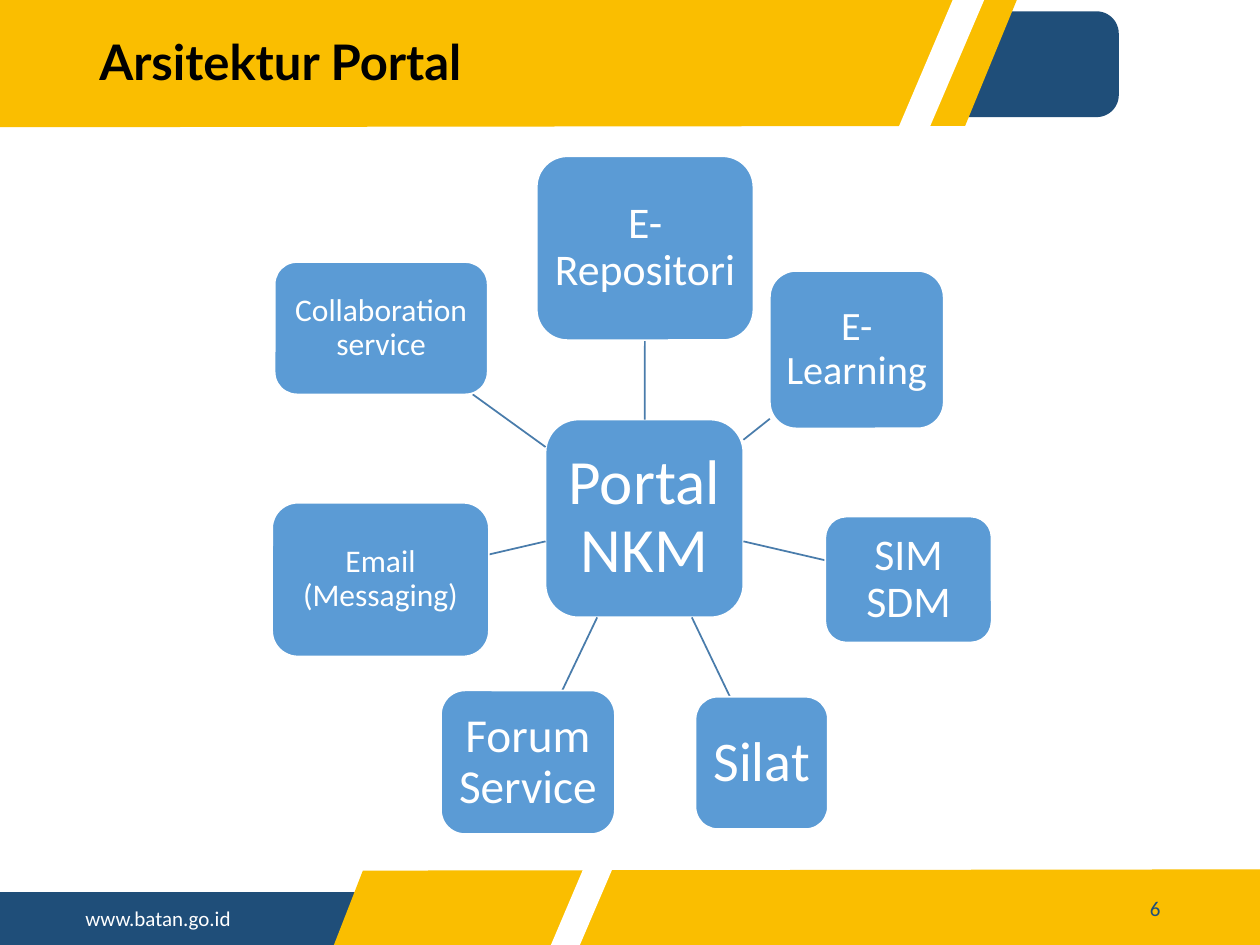
from dataclasses import dataclass

from lxml import etree
from pptx import Presentation
from pptx import util as u
from pptx.dml.color import RGBColor
from pptx.enum import shapes, text
from pptx.oxml import ns

NAVY = RGBColor(0x1F, 0x4E, 0x79)
GOLD = RGBColor(0xFA, 0xBE, 0x00)
BLUE = RGBColor(0x5B, 0x9B, 0xD5)
SPOKE = RGBColor(0x49, 0x7C, 0xAB)
WHITE = RGBColor(0xFF, 0xFF, 0xFF)
BLACK = RGBColor(0x00, 0x00, 0x00)


@dataclass(frozen=True)
class Box:
    left: float
    top: float
    width: float
    height: float

    @property
    def center(self) -> tuple[float, float]:
        return self.left + self.width / 2, self.top + self.height / 2

    def inches(self) -> list[u.Length]:
        return [u.Inches(v) for v in (self.left, self.top, self.width, self.height)]

    def edge_toward(self, target: tuple[float, float]) -> tuple[float, float]:
        x, y = self.center
        dx, dy = target[0] - x, target[1] - y
        reach = 1 / max(abs(dx) / (self.width / 2), abs(dy) / (self.height / 2))
        return x + dx * reach, y + dy * reach


@dataclass(frozen=True)
class Node:
    label: str
    box: Box
    size: int


HUB = Node("Portal NKM", Box(4.33, 3.33, 1.57, 1.57), 36)
SERVICES = [
    Node("E-Repositori", Box(4.26, 1.24, 1.72, 1.46), 25),
    Node("E-Learning", Box(6.11, 2.15, 1.38, 1.25), 23),
    Node("SIM SDM", Box(6.55, 4.1, 1.32, 1), 25),
    Node("Silat", Box(5.52, 5.53, 1.05, 1.05), 32),
    Node("Forum Service", Box(3.5, 5.48, 1.38, 1.14), 27),
    Node("Email (Messaging)", Box(2.16, 3.99, 1.72, 1.22), 18),
    Node("Collaboration service", Box(2.18, 2.08, 1.69, 1.05), 18),
]


def paint(shape, fill: RGBColor) -> None:
    shape.shadow.inherit = False
    shape.fill.solid()
    shape.fill.fore_color.rgb = fill
    shape.line.fill.background()


def add_block(slide, kind, box: Box, fill: RGBColor):
    block = slide.shapes.add_shape(kind, *box.inches())
    paint(block, fill)
    return block


def add_band(slide, corners: list[tuple[float, float]], fill: RGBColor) -> None:
    points = [(u.Inches(x), u.Inches(y)) for x, y in corners]
    builder = slide.shapes.build_freeform(*points[0])
    builder.add_line_segments(points[1:], close=True)
    paint(builder.convert_to_shape(), fill)


def write(frame, words: str, size: int, color: RGBColor, font="Calibri",
          bold=False, align=text.PP_ALIGN.LEFT, spacing=1.0,
          anchor=text.MSO_ANCHOR.MIDDLE) -> None:
    frame.word_wrap = True
    frame.vertical_anchor = anchor
    paragraph = frame.paragraphs[0]
    paragraph.alignment = align
    paragraph.line_spacing = spacing
    run = paragraph.add_run()
    run.text = words
    run.font.size = u.Pt(size)
    run.font.name = font
    run.font.bold = bold
    run.font.color.rgb = color


def add_label(slide, box: Box, words: str, size: int, color: RGBColor, **style) -> None:
    write(slide.shapes.add_textbox(*box.inches()).text_frame, words, size, color, **style)


def add_node(slide, node: Node) -> None:
    tile = add_block(slide, shapes.MSO_SHAPE.ROUNDED_RECTANGLE, node.box, BLUE)
    tile.line.color.rgb = WHITE
    tile.line.width = u.Pt(1)
    frame = tile.text_frame
    margin = u.Inches(round(node.size / 360, 2))
    frame.margin_left = frame.margin_right = margin
    frame.margin_top = frame.margin_bottom = margin
    write(frame, node.label, node.size, WHITE,
          align=text.PP_ALIGN.CENTER, spacing=0.9)


def add_spoke(slide, hub: Box, service: Box) -> None:
    start = hub.edge_toward(service.center)
    end = service.edge_toward(hub.center)
    spoke = slide.shapes.add_connector(
        shapes.MSO_CONNECTOR.STRAIGHT, *[u.Inches(v) for v in start + end])
    spoke.line.color.rgb = SPOKE
    spoke.line.width = u.Pt(1)
    etree.SubElement(spoke._element.spPr, ns.qn("a:effectLst"))


def add_frame(slide) -> None:
    add_block(slide, shapes.MSO_SHAPE.RECTANGLE, Box(0, 7.08, 2.97, 0.42), NAVY)
    add_band(slide, [(2.88, 6.91), (10, 6.9), (10, 7.5), (2.65, 7.5)], GOLD)
    badge = add_block(slide, shapes.MSO_SHAPE.ROUNDED_RECTANGLE,
                      Box(6.92, 0.09, 1.96, 0.84), NAVY)
    badge.adjustments[0] = 0.21
    add_band(slide, [(0, 0), (8.07, 0), (7.66, 1), (0, 1.01)], GOLD)
    add_label(slide, Box(0.58, 7.14, 2.04, 0.3), "www.batan.go.id", 12, WHITE,
              anchor=text.MSO_ANCHOR.TOP)
    add_band(slide, [(7.57, -0.02), (7.82, -0.02), (4.59, 7.53), (4.36, 7.53)], WHITE)


def main() -> None:
    deck = Presentation()
    deck.slide_width, deck.slide_height = u.Inches(10), u.Inches(7.5)
    slide = deck.slides.add_slide(deck.slide_layouts[6])
    add_frame(slide)
    add_label(slide, Box(0.69, 0.09, 6.22, 0.84), "Arsitektur Portal", 28, BLACK,
              font="Lato", bold=True, spacing=0.9)
    add_label(slide, Box(8.68, 7.01, 0.63, 0.4), "6", 12, NAVY,
              align=text.PP_ALIGN.RIGHT)
    add_node(slide, HUB)
    for service in SERVICES:
        add_spoke(slide, HUB.box, service.box)
        add_node(slide, service)
    deck.save("out.pptx")


if __name__ == "__main__":
    main()
